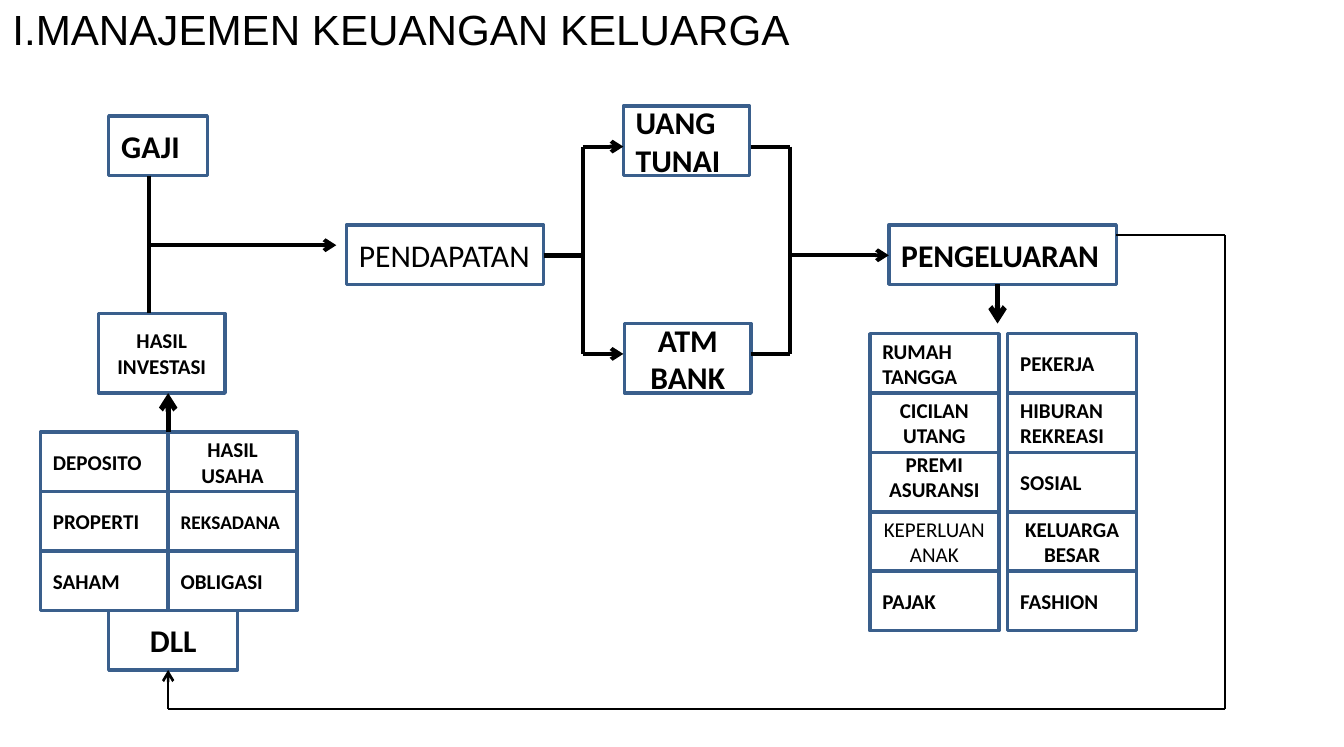
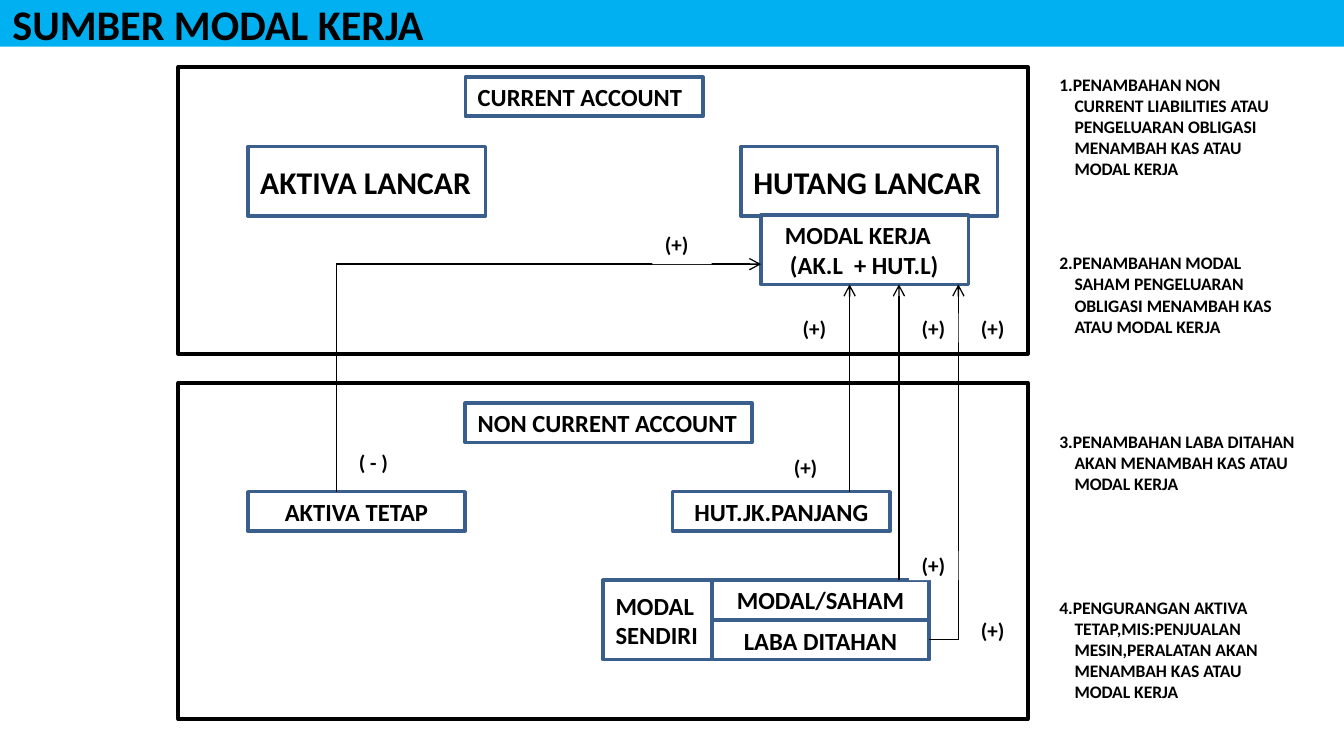
from dataclasses import dataclass

from lxml.etree import SubElement
from pptx import Presentation
from pptx.dml.color import RGBColor
from pptx.enum.shapes import MSO_CONNECTOR as Connector, MSO_SHAPE as Shape
from pptx.enum.text import MSO_ANCHOR as Anchor, PP_ALIGN as Align
from pptx.oxml.ns import qn
from pptx.util import Inches, Pt


@dataclass(frozen=True)
class Theme:
    ink: RGBColor = RGBColor.from_string("000000")
    paper: RGBColor = RGBColor.from_string("FFFFFF")
    border: RGBColor = RGBColor.from_string("3A5F8C")
    band: RGBColor = RGBColor.from_string("00B0F0")
    body_font: str = "Calibri"
    title_font: str = "Arial"
    title: int = 24
    large: int = 18
    medium: int = 14
    small: int = 12
    compact: int = 11
    note: int = 10
    outline: float = 2
    thin: float = 0.75
    loop: float = 1.5
    flow: float = 2.25
    thick: float = 3


T = Theme()
WIDTH, HEIGHT = 10.63, 5.91


def set_text(sp, text, *, size=T.small, bold=True, font=T.body_font,
             center=False, indents=(0,), bottom=0.05):
    tf = sp.text_frame
    tf.word_wrap = True
    tf.vertical_anchor = Anchor.MIDDLE
    tf.margin_left = tf.margin_right = Inches(0.1)
    tf.margin_top, tf.margin_bottom = Inches(0.05), Inches(bottom)
    for i, line in enumerate(text.split("\n")):
        p = tf.paragraphs[0] if i == 0 else tf.add_paragraph()
        p.alignment = Align.CENTER if center else Align.LEFT
        indent = indents[min(i, len(indents) - 1)]
        if indent:
            p._p.get_or_add_pPr().set("marL", str(Inches(indent)))
        r = p.add_run()
        r.text = line
        r.font.name, r.font.size, r.font.bold = font, Pt(size), bold
        r.font.color.rgb = T.ink


def add_box(s, at, text="", *, fill=T.paper, border=T.border, **text_format):
    sp = s.shapes.add_shape(Shape.RECTANGLE, *map(Inches, at))
    sp.shadow.inherit = False
    sp.fill.solid()
    sp.fill.fore_color.rgb = fill
    if border is None:
        sp.line.fill.background()
    else:
        sp.line.color.rgb = border
        sp.line.width = Pt(T.outline)
    if text:
        set_text(sp, text, **text_format)
    return sp


def add_line(s, start, end, width, arrow=False):
    c = s.shapes.add_connector(Connector.STRAIGHT, *map(Inches, start + end))
    c.line.color.rgb = T.ink
    c.line.width = Pt(width)
    if arrow:
        SubElement(c.line._get_or_add_ln(), qn("a:tailEnd"), type="arrow")
    SubElement(c._element.spPr, qn("a:effectLst"))


def add_route(s, points, width, arrow=True):
    legs = list(zip(points, points[1:]))
    for i, (start, end) in enumerate(legs, 1):
        add_line(s, start, end, width, arrow and i == len(legs))


def add_grid(s, columns, top, rows):
    for i, row in enumerate(rows):
        for left, (text, text_format) in zip(columns, row):
            add_box(s, (left, top + i * 0.47, 1.02, 0.47), text, **text_format)


def add_title(s, text, height, *, fill=T.paper, **text_format):
    add_box(s, (0, 0, WIDTH, height), text, fill=fill, border=None,
            size=T.title, **text_format)


def family_finance(s):
    add_title(s, "I.MANAJEMEN KEUANGAN KELUARGA", 0.45,
              font=T.title_font, bold=False)
    mid = {"center": True}

    add_box(s, (2.74, 1.78, 1.56, 0.47), "PENDAPATAN", size=T.large, bold=False)
    add_box(s, (7.03, 1.78, 1.8, 0.47), "PENGELUARAN", size=T.large)
    add_box(s, (0.78, 2.48, 1, 0.63), "HASIL\nINVESTASI", center=True)
    add_box(s, (4.93, 0.84, 1, 0.55), "UANG\nTUNAI", size=T.large)
    add_box(s, (0.86, 0.92, 0.78, 0.47), "GAJI", size=T.large)
    add_box(s, (4.94, 2.56, 1, 0.55), "ATM\nBANK", size=T.large, center=True)

    add_line(s, (1.18, 1.39), (1.18, 2.48), T.flow)
    add_line(s, (1.18, 1.94), (2.66, 1.94), T.flow, True)
    add_line(s, (4.3, 2.02), (4.61, 2.02), T.thick)
    for x in (4.61, 6.25):
        add_line(s, (x, 1.16), (x, 2.8), T.flow)
    for y in (1.16, 2.8):
        add_line(s, (4.61, y), (4.93, y), T.flow, True)
        add_line(s, (5.94, y), (6.25, y), T.flow)
    add_line(s, (6.25, 2.02), (7.03, 2.02), T.flow, True)

    add_grid(s, (6.88, 7.97), 2.64, [
        [("RUMAH\nTANGGA", {}), ("PEKERJA", {})],
        [("CICILAN\nUTANG", mid), ("HIBURAN\nREKREASI", {})],
        [("PREMI\nASURANSI", {"center": True, "bottom": 0.14}), ("SOSIAL", {})],
        [("KEPERLUAN\nANAK", {"center": True, "bold": False}),
         ("KELUARGA\nBESAR", mid)],
        [("PAJAK", {}), ("FASHION", {})],
    ])
    add_grid(s, (0.32, 1.33), 3.42, [
        [("DEPOSITO", {}), ("HASIL\nUSAHA", mid)],
        [("PROPERTI", {}), ("REKSADANA", {"size": T.compact})],
        [("SAHAM", {}), ("OBLIGASI", {})],
    ])
    add_box(s, (0.86, 4.83, 1.02, 0.47), "DLL", size=T.large, center=True)

    add_line(s, (7.89, 2.25), (7.89, 2.56), T.thick, True)
    add_line(s, (1.33, 3.42), (1.33, 3.11), T.thick, True)
    add_route(s, [(8.83, 1.86), (9.69, 1.86), (9.69, 5.61),
                  (1.33, 5.61), (1.33, 5.3)], T.loop)


def working_capital(s):
    add_title(s, "SUMBER MODAL KERJA", 0.37, fill=T.band)
    for top, height in ((0.53, 2.27), (3.03, 2.66)):
        add_box(s, (1.41, top, 6.72, height), border=T.ink)

    add_box(s, (3.68, 0.61, 1.88, 0.31), "CURRENT ACCOUNT", size=T.medium)
    add_box(s, (3.68, 3.19, 2.27, 0.31), "NON CURRENT ACCOUNT", size=T.medium)
    add_box(s, (1.96, 1.16, 1.88, 0.55), "AKTIVA LANCAR", size=T.large)
    add_box(s, (5.86, 1.16, 2.03, 0.55), "HUTANG LANCAR", size=T.large)
    add_box(s, (6.02, 1.7, 1.64, 0.55), "MODAL KERJA\n(AK.L  + HUT.L)",
            size=T.medium, indents=(0.09, 0.13))
    for left, top, text in (
        (5.32, 3.89, "HUT.JK.PANJANG"),
        (1.96, 3.89, "AKTIVA TETAP"),
        (5.63, 4.59, "MODAL/SAHAM"),
        (5.63, 4.91, "LABA DITAHAN"),
    ):
        add_box(s, (left, top, 1.72, 0.31), text, size=T.medium, center=True)
    add_box(s, (4.77, 4.59, 0.86, 0.63), "MODAL\nSENDIRI", size=T.medium)

    for route in (
        [(6.72, 3.89), (6.72, 2.25)],
        [(7.11, 4.59), (7.11, 2.25)],
        [(7.35, 5.06), (7.58, 5.06), (7.58, 2.25)],
        [(2.66, 3.89), (2.66, 2.09), (6.02, 2.09)],
    ):
        add_route(s, route, T.thin)

    add_box(s, (2.74, 3.5, 0.47, 0.31), "( - )", border=None)
    for at in (
        (7.19, 2.48, 0.39, 0.23),
        (6.18, 3.58, 0.47, 0.23),
        (7.66, 4.83, 0.39, 0.31),
        (7.66, 2.48, 0.39, 0.23),
        (5.16, 1.78, 0.47, 0.31),
        (6.25, 2.48, 0.39, 0.23),
        (7.19, 4.36, 0.39, 0.23),
    ):
        add_box(s, at, "(+)", border=None)

    for top, text in (
        (0.53, "1.PENAMBAHAN NON\nCURRENT LIABILITIES ATAU\n"
               "PENGELUARAN OBLIGASI\nMENAMBAH KAS ATAU\nMODAL KERJA"),
        (1.86, "2.PENAMBAHAN MODAL\nSAHAM PENGELUARAN\n"
               "OBLIGASI MENAMBAH KAS\nATAU MODAL KERJA"),
        (3.19, "3.PENAMBAHAN LABA DITAHAN\nAKAN MENAMBAH KAS ATAU\n"
               "MODAL KERJA"),
        (4.67, "4.PENGURANGAN AKTIVA\nTETAP,MIS:PENJUALAN\n"
               "MESIN,PERALATAN AKAN\nMENAMBAH KAS ATAU\nMODAL KERJA"),
    ):
        add_box(s, (8.28, top, 2.11, 0.94), text, border=None,
                size=T.note, indents=(0, 0.12))


def main():
    prs = Presentation()
    prs.slide_width, prs.slide_height = Inches(WIDTH), Inches(HEIGHT)
    for build in (family_finance, working_capital):
        build(prs.slides.add_slide(prs.slide_layouts[6]))
    prs.save("out.pptx")


if __name__ == "__main__":
    main()
